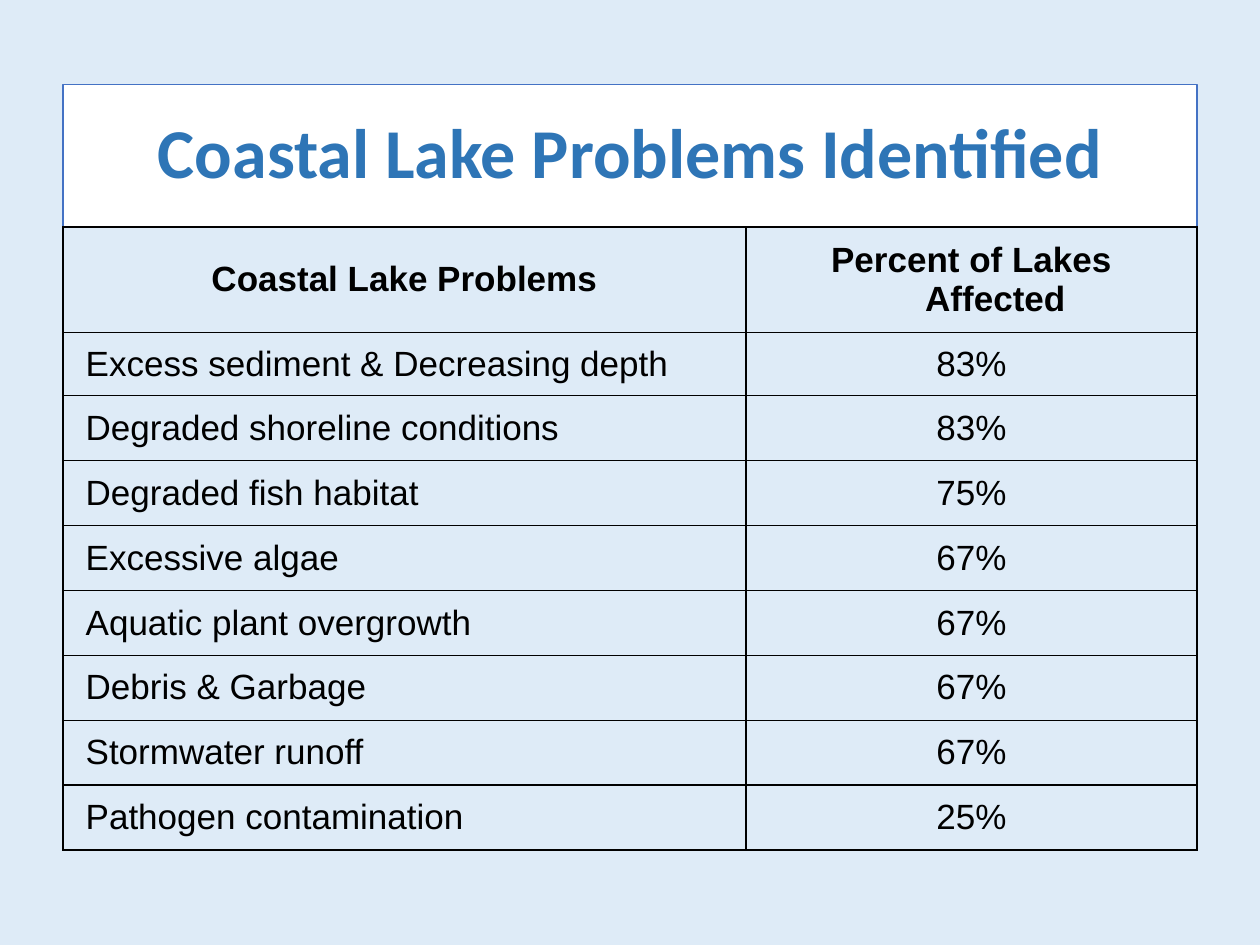
import pptx
import pptx.dml.color
import pptx.enum.shapes
import pptx.enum.text
import pptx.oxml
import pptx.oxml.ns
import pptx.util

Inches, Pt = pptx.util.Inches, pptx.util.Pt
RGBColor = pptx.dml.color.RGBColor
ALIGN = pptx.enum.text.PP_ALIGN
MIDDLE = pptx.enum.text.MSO_ANCHOR.MIDDLE

# Content
TITLE = "Coastal Lake Problems Identified"
HEADERS = ("Coastal Lake Problems", "Percent of Lakes Affected")
PROBLEMS = [
    ("Excess sediment & Decreasing depth", "83%"),
    ("Degraded shoreline conditions", "83%"),
    ("Degraded fish habitat", "75%"),
    ("Excessive algae", "67%"),
    ("Aquatic plant overgrowth", "67%"),
    ("Debris & Garbage", "67%"),
    ("Stormwater runoff", "67%"),
    ("Pathogen contamination", "25%"),
]

# Colours and text formats
PALE_BLUE = RGBColor(0xDE, 0xEB, 0xF7)
WHITE = RGBColor(0xFF, 0xFF, 0xFF)
OUTLINE_BLUE = RGBColor(0x44, 0x72, 0xC4)
TITLE_BLUE = RGBColor(0x2E, 0x75, 0xB6)
BLACK = RGBColor(0, 0, 0)
TITLE_FONT = {"name": "Calibri", "size": Pt(40), "bold": True}
HEADER_FONT = {"name": "Arial", "size": Pt(20), "bold": True}
BODY_FONT = {"name": "Arial", "size": Pt(20), "bold": False}

# Layout in inches
LEFT, WIDTH = 0.5, 9
TITLE_TOP, TABLE_TOP, TABLE_HEIGHT = 0.67, 1.8, 4.95
COLUMN_WIDTHS = (5.42, 3.58)
HEADER_HEIGHT, FIRST_HEIGHT = 0.84, 0.5
OTHER_HEIGHT = (TABLE_HEIGHT - HEADER_HEIGHT - FIRST_HEIGHT) / (len(PROBLEMS) - 1)
ROW_HEIGHTS = [HEADER_HEIGHT, FIRST_HEIGHT] + [OTHER_HEIGHT] * (len(PROBLEMS) - 1)
HANGING = 0.38
PROBLEM_MARGIN = 0.18


def write(frame, text, font, color, align):
    para = frame.paragraphs[0]
    para.alignment = align
    span = para.add_run()
    span.text = text
    for name, value in font.items():
        setattr(span.font, name, value)
    span.font.color.rgb = color
    return para


def add_borders(cell):
    properties = cell._tc.get_or_add_tcPr()
    for side in ("lnL", "lnR", "lnT", "lnB"):
        properties.append(pptx.oxml.parse_xml(
            f'<a:{side} {pptx.oxml.ns.nsdecls("a")} w="{Pt(1)}">'
            f'<a:solidFill><a:srgbClr val="{BLACK}"/></a:solidFill></a:{side}>'))


def add_title(page):
    box = page.shapes.add_shape(
        pptx.enum.shapes.MSO_SHAPE.RECTANGLE, Inches(LEFT), Inches(TITLE_TOP),
        Inches(WIDTH), Inches(TABLE_TOP - TITLE_TOP))
    box.shadow.inherit = False
    box.fill.solid()
    box.fill.fore_color.rgb = WHITE
    box.line.color.rgb = OUTLINE_BLUE
    box.line.width = Pt(1)
    box.text_frame.word_wrap = True
    box.text_frame.vertical_anchor = MIDDLE
    para = write(box.text_frame, TITLE, TITLE_FONT, TITLE_BLUE, ALIGN.CENTER)
    para.line_spacing = 0.9


def add_problem_table(page):
    rows = [HEADERS] + PROBLEMS
    table = page.shapes.add_table(
        len(rows), len(HEADERS), Inches(LEFT), Inches(TABLE_TOP),
        Inches(WIDTH), Inches(TABLE_HEIGHT)).table
    table.first_row = table.horz_banding = False
    for column, width in zip(table.columns, COLUMN_WIDTHS):
        column.width = Inches(width)
    for row, height in zip(table.rows, ROW_HEIGHTS):
        row.height = Inches(height)

    for r, texts in enumerate(rows):
        for c, text in enumerate(texts):
            cell = table.cell(r, c)
            add_borders(cell)
            cell.fill.background()
            cell.vertical_anchor = MIDDLE
            is_problem = r > 0 and c == 0
            if is_problem:
                cell.margin_left = Inches(PROBLEM_MARGIN)
            para = write(cell.text_frame, text, BODY_FONT if r else HEADER_FONT,
                         BLACK, ALIGN.LEFT if is_problem else ALIGN.CENTER)
            # Hanging indent
            indent = para._p.get_or_add_pPr()
            indent.set("marL", str(Inches(HANGING)))
            indent.set("indent", str(-Inches(HANGING)))


def main():
    deck = pptx.Presentation()
    deck.slide_width, deck.slide_height = Inches(10), Inches(7.5)
    page = deck.slides.add_slide(deck.slide_layouts[6])
    page.background.fill.solid()
    page.background.fill.fore_color.rgb = PALE_BLUE
    add_title(page)
    add_problem_table(page)
    deck.save("out.pptx")


if __name__ == "__main__":
    main()
